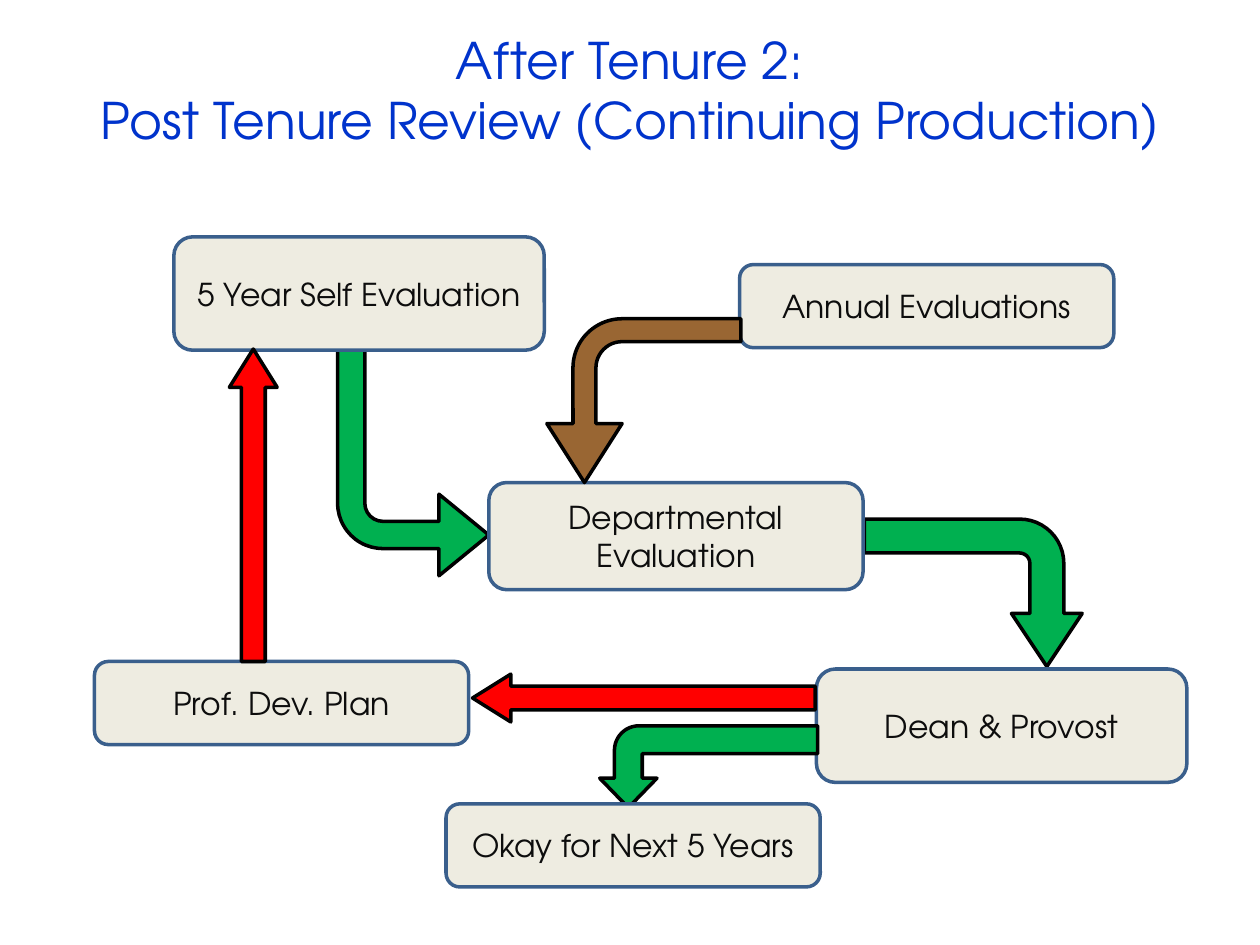
import pptx
import pptx.util
from pptx.dml.color import RGBColor
from pptx.enum.shapes import MSO_SHAPE
from pptx.enum.text import MSO_ANCHOR, PP_ALIGN
from pptx.util import Inches

FONT = "TeX Gyre Adventor"
TITLE_BLUE = RGBColor(0x00, 0x33, 0xCC)
INK = RGBColor(0x0D, 0x0D, 0x0D)
BLACK = RGBColor(0x00, 0x00, 0x00)
CREAM = RGBColor(0xEE, 0xEC, 0xE1)
BORDER = RGBColor(0x3A, 0x5F, 0x8C)
GREEN = RGBColor(0x00, 0xB0, 0x50)
RED = RGBColor(0xFF, 0x00, 0x00)
BROWN = RGBColor(0x99, 0x66, 0x33)

BENT = MSO_SHAPE.BENT_ARROW
LEFT = MSO_SHAPE.LEFT_ARROW

TITLE = "After Tenure 2:\vPost Tenure Review (Continuing Production)"

# Back to front. Step: text, place. Arrow: preset, place, colour, rotation, flips, adjustments.
FLOW = [
    (BENT, (2.68, 2.78, 1.2, 1.79), GREEN, 0, "V", (0.18, 0.27, 0.33, 0.3)),
    (BENT, (7.14, 3.84, 1.17, 1.73), GREEN, 270, "HV", (0.23, 0.24, 0.36, 0.3)),
    ("Departmental Evaluation", (3.88, 3.83, 2.97, 0.85)),
    ("5 Year Self Evaluation", (1.38, 1.88, 2.94, 0.9)),
    ("Dean & Provost", (6.48, 5.31, 2.94, 0.9)),
    (LEFT, (3.75, 5.35, 2.72, 0.38), RED, 0, "", (0.5, 0.8)),
    (BENT, (5.3, 5.22, 0.65, 1.73), GREEN, 90, "V", (0.34, 0.35, 0.36, 0.3)),
    ("Okay for Next 5 Years", (3.54, 6.38, 2.97, 0.66)),
    ("Annual Evaluations", (5.87, 2.1, 2.97, 0.66)),
    (BENT, (4.46, 2.41, 1.3, 1.54), BROWN, 90, "V", (0.14, 0.23, 0.36, 0.3)),
    ("Prof. Dev. Plan", (0.75, 5.25, 2.97, 0.66)),
    (LEFT, (0.77, 3.82, 2.48, 0.38), RED, 90, "", (0.5, 0.8)),
]


def write(holder, text, size, colour):
    frame = holder.text_frame
    frame.word_wrap = True
    frame.vertical_anchor = MSO_ANCHOR.MIDDLE
    paragraph = frame.paragraphs[0]
    paragraph.text = text
    paragraph.alignment = PP_ALIGN.CENTER
    for run in paragraph.runs:
        run.font.name = FONT
        run.font.size = pptx.util.Pt(size)
        run.font.color.rgb = colour


def draw(slide, preset, place, fill, outline):
    shape = slide.shapes.add_shape(preset, *map(Inches, place))
    shape.shadow.inherit = False
    shape.fill.solid()
    shape.fill.fore_color.rgb = fill
    shape.line.color.rgb = outline
    shape.line.width = pptx.util.Pt(2)
    return shape


def add_step(slide, text, place):
    step = draw(slide, MSO_SHAPE.ROUNDED_RECTANGLE, place, CREAM, BORDER)
    write(step, text, 18, INK)


def add_arrow(slide, preset, place, colour, rotation, flips, adjustments):
    arrow = draw(slide, preset, place, colour, BLACK)
    arrow.rotation = rotation
    for axis in flips:
        arrow.element.spPr.xfrm.set("flip" + axis, "1")
    for index, value in enumerate(adjustments):
        arrow.adjustments[index] = value


def main():
    deck = pptx.Presentation()
    deck.slide_width, deck.slide_height = Inches(10), Inches(7.5)
    slide = deck.slides.add_slide(deck.slide_layouts[6])
    title = slide.shapes.add_textbox(*map(Inches, (0.5, 0.3, 9, 0.82)))
    write(title, TITLE, 28.8, TITLE_BLUE)
    for part in FLOW:
        add = add_step if isinstance(part[0], str) else add_arrow
        add(slide, *part)
    deck.save("out.pptx")


if __name__ == "__main__":
    main()
